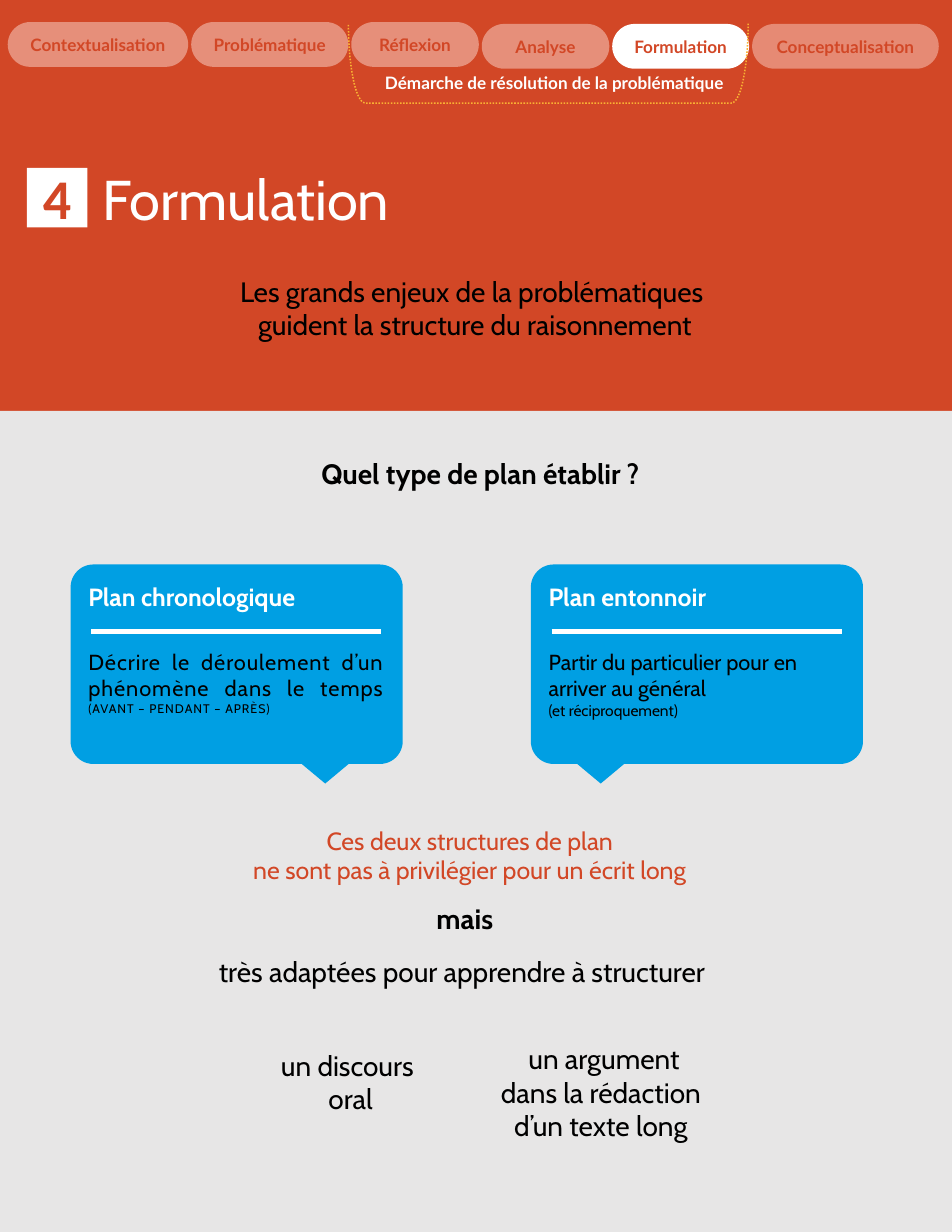
import pptx
import pptx.util
import pptx.dml.color
import pptx.enum.dml
import pptx.enum.shapes
import pptx.enum.text

Pt = pptx.util.Pt
SHAPE = pptx.enum.shapes.MSO_SHAPE
ALIGN = pptx.enum.text.PP_ALIGN
ANCHOR = pptx.enum.text.MSO_ANCHOR

COLORS = {"red": "D24726", "gray": "E7E6E6", "white": "FFFFFF", "black": "000000",
          "pill": "E68F7A", "last_pill": "E68A74", "dots": "F9B233", "blue": "009FE3"}

# Content: navigation steps (label, width, top, fill)
STEPS = [
    ("Contextualisation", 116, 14.2, "pill"),
    ("Problématique", 101, 14.2, "pill"),
    ("Réflexion", 82, 14.2, "pill"),
    ("Analyse", 82, 15.4, "pill"),
    ("Formulation", 88, 15.4, "white"),
    ("Conceptualisation", 120, 15.4, "last_pill"),
]

# Content: free texts (paragraphs, box, format)
TEXTS = [
    (["Formulation"], (59, 102.2, 474, 51), dict(size=36, color="white", align=ALIGN.LEFT)),
    (["4"], (14.4, 101.5, 44.6, 51), dict(size=36, color="red", bold=True, font="Calibri")),
    (["Démarche de résolution de la problématique"], (221.8, 43.2, 269.3, 20.9),
     dict(size=11, color="white", bold=True, font="Lato")),
    (["Les grands enjeux de la problématiques ", "guident la structure du raisonnement"],
     (-1.4, 172.8, 613.4, 51), {}),
    (["Quel type de plan établir ?"], (185, 290.2, 247.7, 28.8), dict(bold=True)),
    (["Ces deux structures de plan\nne sont pas à privilégier pour un écrit long"],
     (91.4, 527, 421.2, 46), dict(size=16, color="red")),
    (["mais"], (270.7, 576, 56.2, 28.8), dict(bold=True, wrap=False)),
    (["très adaptées pour apprendre à structurer"], (121.7, 609.8, 350.6, 51), {}),
    (["un discours ", "oral"], (169.2, 670.3, 112.3, 51), dict(wrap=False)),
    ([" un argument dans la rédaction d’un texte long"], (313.9, 666, 144.7, 94.3), {}),
]

# Content: plan cards
CARDS = [
    dict(left=45.4, tail=140.4, title="Plan chronologique", align=ALIGN.JUSTIFY,
         body="Décrire le déroulement d’un phénomène dans le temps ", spacing=0.6,
         note="(AVANT – PENDANT – APRÈS)", note_size=8),
    dict(left=341.3, tail=21.6, title="Plan entonnoir", align=ALIGN.LEFT,
         body="Partir du particulier pour en arriver au général \n", spacing=0,
         note="(et réciproquement)", note_size=10),
]
CARD_TOP, CARD_W, CARD_H = 362.9, 213.5, 128.2


def rgb(name):
    return pptx.dml.color.RGBColor.from_string(COLORS[name])


def add_shape(kind, left, top, width, height, fill=None, adj=None, rotation=0):
    sp = s.shapes.add_shape(kind, Pt(left), Pt(top), Pt(width), Pt(height))
    sp.shadow.inherit = False
    sp.rotation = rotation
    if adj is not None:
        sp.adjustments[0] = adj
    if fill:
        sp.fill.solid()
        sp.fill.fore_color.rgb = rgb(fill)
        sp.line.fill.background()
    else:
        sp.fill.background()
    return sp


def add_text(p, text, size=18, color="black", bold=False, font="Cabin",
             align=ALIGN.CENTER, spacing=0):
    p.alignment = align
    for i, line in enumerate(text.split("\n")):
        if i:
            p.add_line_break()
        if not line:
            continue
        r = p.add_run()
        r.text = line
        r.font.size, r.font.bold, r.font.name = Pt(size), bold, font
        r.font.color.rgb = rgb(color)
        if spacing:
            r.font._element.set("spc", str(round(spacing * 100)))


def add_box(paragraphs, left, top, width, height, wrap=True, **fmt):
    tf = s.shapes.add_textbox(Pt(left), Pt(top), Pt(width), Pt(height)).text_frame
    tf.word_wrap = wrap
    for i, text in enumerate(paragraphs):
        add_text(tf.add_paragraph() if i else tf.paragraphs[0], text, **fmt)
    return tf


prs = pptx.Presentation()
prs.slide_width, prs.slide_height = Pt(612), Pt(792)
s = prs.slides.add_slide(prs.slide_layouts[6])

# Background, lower panel and number tile
s.background.fill.solid()
s.background.fill.fore_color.rgb = rgb("red")
add_shape(SHAPE.RECTANGLE, 0, 264.2, 612, 527.8, "gray")
add_shape(SHAPE.RECTANGLE, 17.3, 108, 38.9, 38.2, "white")

# Navigation pills, left to right
left = 5
for label, width, top, fill in STEPS:
    sp = add_shape(SHAPE.ROUNDED_RECTANGLE, left, top, width, 28.8, fill, adj=0.5)
    tf = sp.text_frame
    tf.vertical_anchor = ANCHOR.MIDDLE
    add_text(tf.paragraphs[0], label, size=11, color="red", bold=True, font="Lato")
    left += width + 1.9

# Dotted bracket around the middle steps
bracket = add_shape(SHAPE.RIGHT_BRACKET, 326.9, -87.8, 51.1, 257, adj=0.212, rotation=90)
bracket.line.color.rgb = rgb("dots")
bracket.line.width = Pt(1)
bracket.line.dash_style = pptx.enum.dml.MSO_LINE.ROUND_DOT

# Plan cards
for card in CARDS:
    x, align = card["left"], card["align"]
    add_shape(SHAPE.ROUNDED_RECTANGLE, x, CARD_TOP, CARD_W, CARD_H, "blue", adj=0.114)
    add_shape(SHAPE.ISOSCELES_TRIANGLE, x + card["tail"], CARD_TOP + 121.4, 46.5, 19.4,
              "blue", rotation=180)
    tf = add_box([card["title"]], x + 4.3, CARD_TOP + 7.2, 204.3, 113.8,
                 size=16, color="white", bold=True, align=align)
    tf.paragraphs[0].space_after = Pt(18)
    p = tf.add_paragraph()
    p.space_before = Pt(6)
    add_text(p, card["body"], size=14, align=align, spacing=card["spacing"])
    add_text(p, card["note"], size=card["note_size"], align=align, spacing=card["spacing"])
    y = Pt(CARD_TOP + 43.2)
    rule = s.shapes.add_connector(pptx.enum.shapes.MSO_CONNECTOR.STRAIGHT,
                                  Pt(x + 13.3), y, Pt(x + 199.8), y)
    rule.line.color.rgb = rgb("white")
    rule.line.width = Pt(3)
    rule._element.spPr.append(pptx.oxml.parse_xml(
        '<a:effectLst xmlns:a="http://schemas.openxmlformats.org/drawingml/2006/main"/>'))

# Free texts
for paragraphs, box, fmt in TEXTS:
    add_box(paragraphs, *box, **fmt)

prs.save("out.pptx")
